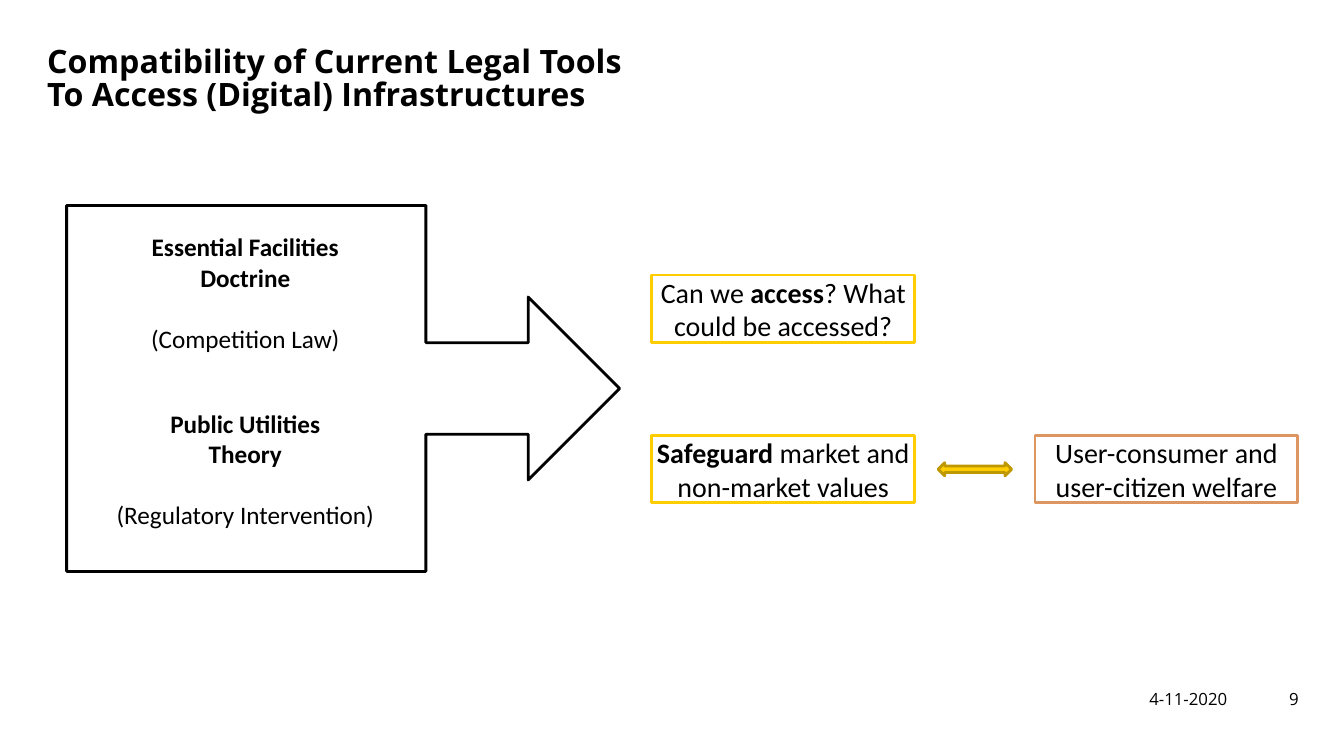
from pptx import Presentation
from pptx import util as u
from pptx.dml.color import RGBColor
from pptx.enum import shapes, text

BLACK = RGBColor(0x00, 0x00, 0x00)
WHITE = RGBColor(0xFF, 0xFF, 0xFF)
YELLOW = RGBColor(0xFF, 0xCD, 0x00)
DARK_YELLOW = RGBColor(0xBD, 0x98, 0x00)
ORANGE = RGBColor(0xDD, 0x95, 0x62)

deck = Presentation()
deck.slide_width, deck.slide_height = u.Cm(33.88), u.Cm(19.05)
page = deck.slides.add_slide(deck.slide_layouts[5])


def add_box(kind, left, top, width, height, fill, line=None):
    box = page.shapes.add_shape(kind, u.Cm(left), u.Cm(top), u.Cm(width), u.Cm(height))
    box.shadow.inherit = False
    box.fill.solid()
    box.fill.fore_color.rgb = fill
    if line is None:
        box.line.fill.background()
    else:
        box.line.color.rgb = line
        box.line.width = u.Pt(2)
    return box


def write(box, paragraphs, size, font, align, anchor=text.MSO_ANCHOR.MIDDLE):
    """Each paragraph is (space before, [(words, bold), ...])."""
    frame = box.text_frame
    frame.word_wrap = True
    frame.vertical_anchor = anchor
    frame.margin_left = frame.margin_right = frame.margin_top = frame.margin_bottom = 0
    for number, (space, runs) in enumerate(paragraphs):
        para = frame.add_paragraph() if number else frame.paragraphs[0]
        para.alignment = align
        if space:
            para.space_before = u.Pt(space)
        for words, bold in runs:
            span = para.add_run()
            span.text = words
            span.font.name = font
            span.font.size = u.Pt(size)
            span.font.bold = bold
            span.font.color.rgb = BLACK


# Title
title = page.shapes.title
title.left, title.top, title.width, title.height = u.Cm(0.94), u.Cm(1.04), u.Cm(15.42), u.Cm(3)
write(title, [(0, [("Compatibility of Current Legal Tools To Access (Digital) Infrastructures", True)])],
      23, "Open Sans", text.PP_ALIGN.LEFT, text.MSO_ANCHOR.TOP)
title.text_frame.auto_size = text.MSO_AUTO_SIZE.NONE
title.text_frame.margin_left = title.text_frame.margin_right = u.Cm(0.25)
title.text_frame.margin_top = u.Cm(0.13)
title.text_frame.paragraphs[0].line_spacing = 0.87

# Callout with the two legal tools
add_box(shapes.MSO_SHAPE.RIGHT_ARROW_CALLOUT, 1.68, 5.18, 13.94, 9.22, WHITE, BLACK)
legal_tools = [
    (5.84, [(0, [("Essential Facilities Doctrine", True)]),
            (22, [("(Competition Law)", False)])]),
    (10.29, [(0, [("Public Utilities", True)]),
             (0, [("Theory", True)]),
             (22, [("(Regulatory Intervention)", False)])]),
]
for top, paragraphs in legal_tools:
    box = add_box(shapes.MSO_SHAPE.RECTANGLE, 2.87, top, 6.63, 3.07, WHITE)
    write(box, paragraphs, 18, "Calibri", text.PP_ALIGN.CENTER, text.MSO_ANCHOR.TOP)

# Questions and aims
aims = [
    (16.43, 6.93, YELLOW, [("Can we ", False), ("access", True), ("? What could be accessed?", False)]),
    (16.43, 10.97, YELLOW, [("Safeguard", True), (" market and non-market values", False)]),
    (26.09, 10.97, ORANGE, [("User-consumer and user-citizen welfare", False)]),
]
for left, top, colour, runs in aims:
    box = add_box(shapes.MSO_SHAPE.RECTANGLE, left, top, 6.63, 1.7, WHITE, colour)
    write(box, [(0, runs)], 20, "Calibri", text.PP_ALIGN.CENTER)

# Arrow between values and welfare
add_box(shapes.MSO_SHAPE.LEFT_RIGHT_ARROW, 23.65, 11.66, 1.85, 0.33, YELLOW, DARK_YELLOW)

# Date and page number
for left, width, words in [(28.63, 2.31, "4-11-2020"), (30.96, 1.78, "9")]:
    box = page.shapes.add_textbox(u.Cm(left), u.Cm(17.09), u.Cm(width), u.Cm(1.03))
    write(box, [(0, [(words, False)])], 12, "Open Sans", text.PP_ALIGN.RIGHT)

deck.save("out.pptx")
